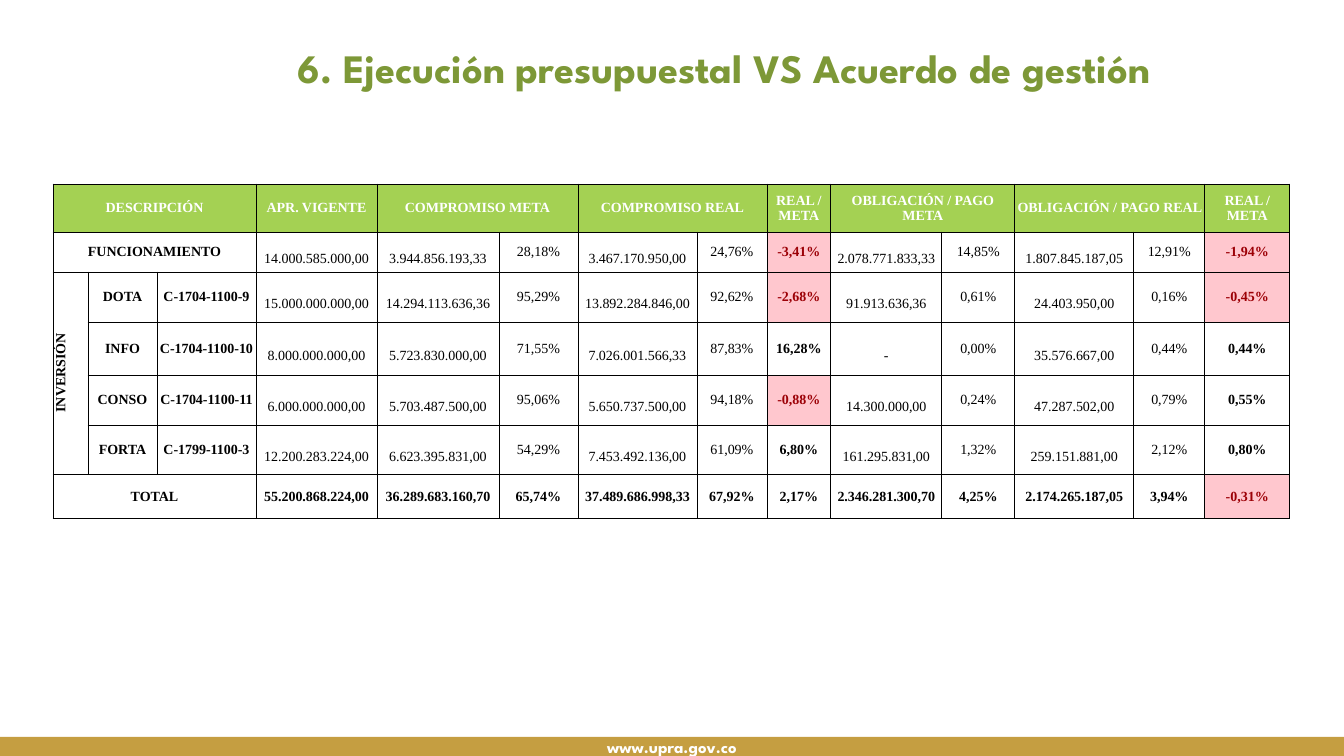
"""Build the budget execution slide."""
from lxml import etree
from pptx import Presentation
from pptx.dml.color import RGBColor
from pptx.enum.shapes import MSO_SHAPE
from pptx.enum.text import MSO_ANCHOR, MSO_AUTO_SIZE, PP_ALIGN
from pptx.oxml.ns import qn
from pptx.util import Emu, Pt

RECTANGLE = MSO_SHAPE.RECTANGLE
TOP, MIDDLE = MSO_ANCHOR.TOP, MSO_ANCHOR.MIDDLE
CENTER, RIGHT = PP_ALIGN.CENTER, PP_ALIGN.RIGHT
NO_AUTOFIT = MSO_AUTO_SIZE.NONE

EMU_PER_PX = 914400 / 100.8
TITLE_ONLY = 5
COLORS = {
    "title": "7D9837", "footer": "C59E41", "header": "A4D153",
    "negative_fill": "FFC7CE", "negative_text": "9C0006",
    "white": "FFFFFF", "black": "000000",
}
HEADING_FONT, TABLE_FONT = "League Spartan", "Times New Roman"

COLUMN_WIDTHS = [35, 69, 99, 121, 122, 79, 119, 70, 64, 111, 73, 119, 71, 85]
ROW_HEIGHTS = [48, 40, 50, 53, 50, 49, 45]
LABEL_COLUMNS = {0, 1, 2}
AMOUNT_COLUMNS = {3, 4, 6, 9, 11}
RATIO_COLUMNS = {8, 13}
AMOUNT_DROP = 14
MERGES = [
    (0, 0, 0, 2), (0, 4, 0, 5), (0, 6, 0, 7), (0, 9, 0, 10), (0, 11, 0, 12),
    (1, 0, 1, 2), (2, 0, 5, 0), (6, 0, 6, 2),
]
ROWS = [
    ["DESCRIPCIÓN", "", "", "APR. VIGENTE", "COMPROMISO META", "",
     "COMPROMISO REAL", "", "REAL / META", "OBLIGACIÓN / PAGO META", "",
     "OBLIGACIÓN / PAGO REAL", "", "REAL / META"],
    ["FUNCIONAMIENTO", "", "", "14.000.585.000,00", "3.944.856.193,33", "28,18%",
     "3.467.170.950,00", "24,76%", "-3,41%", "2.078.771.833,33", "14,85%",
     "1.807.845.187,05", "12,91%", "-1,94%"],
    ["INVERSIÓN", "DOTA", "C-1704-1100-9", "15.000.000.000,00",
     "14.294.113.636,36", "95,29%", "13.892.284.846,00", "92,62%", "-2,68%",
     "91.913.636,36", "0,61%", "24.403.950,00", "0,16%", "-0,45%"],
    ["", "INFO", "C-1704-1100-10", "8.000.000.000,00", "5.723.830.000,00",
     "71,55%", "7.026.001.566,33", "87,83%", "16,28%", "-", "0,00%",
     "35.576.667,00", "0,44%", "0,44%"],
    ["", "CONSO", "C-1704-1100-11", "6.000.000.000,00", "5.703.487.500,00",
     "95,06%", "5.650.737.500,00", "94,18%", "-0,88%", "14.300.000,00", "0,24%",
     "47.287.502,00", "0,79%", "0,55%"],
    ["", "FORTA", "C-1799-1100-3", "12.200.283.224,00", "6.623.395.831,00",
     "54,29%", "7.453.492.136,00", "61,09%", "6,80%", "161.295.831,00", "1,32%",
     "259.151.881,00", "2,12%", "0,80%"],
    ["TOTAL", "", "", "55.200.868.224,00", "36.289.683.160,70", "65,74%",
     "37.489.686.998,33", "67,92%", "2,17%", "2.346.281.300,70", "4,25%",
     "2.174.265.187,05", "3,94%", "-0,31%"],
]


def px(value):
    """Convert pixels to EMU."""
    return Emu(round(value * EMU_PER_PX))


def color(name):
    """Return a named colour."""
    return RGBColor.from_string(COLORS[name])


def apply_format(target, values):
    """Set attributes from a dict of format values."""
    for name, value in values.items():
        setattr(target, name, value)


def write_text(text_frame, text, font_name, size, color_name, bold=True, align=CENTER):
    """Write one formatted paragraph and return it."""
    paragraph = text_frame.paragraphs[0]
    paragraph.alignment = align
    run = paragraph.add_run()
    run.text = text
    apply_format(run.font, {"name": font_name, "size": Pt(size), "bold": bold})
    run.font.color.rgb = color(color_name)
    return paragraph


def add_title(slide, text):
    """Place and format the slide title."""
    title = slide.shapes.title
    apply_format(title, {"left": px(183), "top": px(44),
                         "width": px(978), "height": px(88)})
    apply_format(title.text_frame, {"vertical_anchor": TOP, "word_wrap": True,
                                    "auto_size": NO_AUTOFIT})
    paragraph = write_text(title.text_frame, text, HEADING_FONT, 28.8, "title", align=RIGHT)
    paragraph.line_spacing = 0.9


def add_footer(slide, text):
    """Add the bar with the web address."""
    bar = slide.shapes.add_shape(RECTANGLE, 0, px(737), px(1344), px(19))
    bar.shadow.inherit = False
    bar.fill.solid()
    bar.fill.fore_color.rgb = color("footer")
    bar.line.fill.background()
    apply_format(bar.text_frame, {
        "vertical_anchor": MIDDLE, "word_wrap": True, "margin_left": 0,
        "margin_right": 0, "margin_top": 0, "margin_bottom": 0})
    write_text(bar.text_frame, text, HEADING_FONT, 12, "white")


def add_borders(cell):
    """Draw a thin black line on each side of a cell."""
    properties = cell._tc.get_or_add_tcPr()
    for side in ("lnL", "lnR", "lnT", "lnB"):
        line = etree.SubElement(properties, qn(f"a:{side}"), w=str(Pt(0.5)))
        fill = etree.SubElement(line, qn("a:solidFill"))
        etree.SubElement(fill, qn("a:srgbClr"), val=COLORS["black"])


def format_cell(cell, row, column, text):
    """Write and style a cell by its place and value."""
    header, total = row == 0, row == len(ROWS) - 1
    negative = text.startswith("-") and text.endswith("%")
    dropped = column in AMOUNT_COLUMNS and not (header or total)
    apply_format(cell, {
        "vertical_anchor": MIDDLE, "margin_left": 0, "margin_right": 0,
        "margin_top": px(AMOUNT_DROP) if dropped else 0, "margin_bottom": 0})
    add_borders(cell)
    fill_name = "header" if header else "negative_fill" if negative else None
    if fill_name:
        cell.fill.solid()
        cell.fill.fore_color.rgb = color(fill_name)
    else:
        cell.fill.background()
    if text:
        text_color = "white" if header else "negative_text" if negative else "black"
        bold = header or total or column in LABEL_COLUMNS | RATIO_COLUMNS
        write_text(cell.text_frame, text, TABLE_FONT, 10, text_color, bold)


def add_budget_table(slide):
    """Add the table of targets and real execution."""
    table = slide.shapes.add_table(
        len(ROWS), len(COLUMN_WIDTHS), px(53), px(184),
        px(sum(COLUMN_WIDTHS)), px(sum(ROW_HEIGHTS))).table
    apply_format(table, {"first_row": False, "horz_banding": False})
    for column, width in zip(table.columns, COLUMN_WIDTHS):
        column.width = px(width)
    for row, height in zip(table.rows, ROW_HEIGHTS):
        row.height = px(height)
    for row, texts in enumerate(ROWS):
        for column, text in enumerate(texts):
            format_cell(table.cell(row, column), row, column, text)
    for top, left, bottom, right in MERGES:
        table.cell(top, left).merge(table.cell(bottom, right))
    table.cell(2, 0)._tc.get_or_add_tcPr().set("vert", "vert270")


def main():
    """Build and save the presentation."""
    presentation = Presentation()
    apply_format(presentation, {"slide_width": px(1344), "slide_height": px(756)})
    slide = presentation.slides.add_slide(presentation.slide_layouts[TITLE_ONLY])
    add_footer(slide, "www.upra.gov.co")
    add_title(slide, "6. Ejecución presupuestal VS Acuerdo de gestión")
    add_budget_table(slide)
    presentation.save("out.pptx")


if __name__ == "__main__":
    main()
